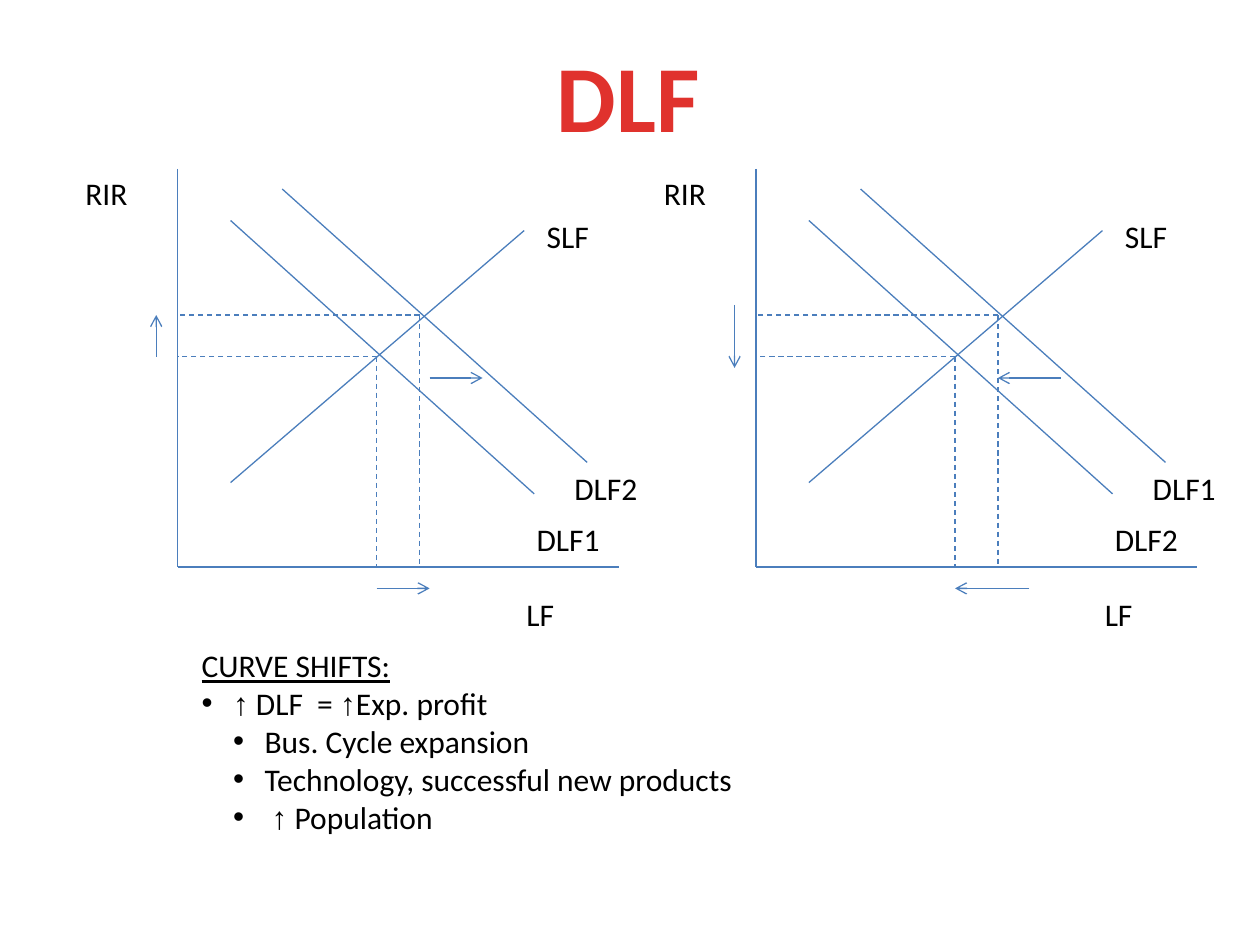
"""Build the DLF slide: two loanable funds graphs and a list of curve shifts."""
from lxml import etree
from pptx import Presentation
from pptx.dml.color import RGBColor
from pptx.enum.dml import MSO_LINE_DASH_STYLE as Dash
from pptx.enum.shapes import MSO_CONNECTOR as Connector
from pptx.enum.text import MSO_ANCHOR as Anchor, MSO_AUTO_SIZE as AutoSize, PP_ALIGN as Align
from pptx.oxml.ns import qn
from pptx.util import Inches, Pt

RED = RGBColor(0xE0, 0x32, 0x2D)
BLUE = RGBColor(0x4B, 0x7E, 0xBC)
BLACK = RGBColor(0, 0, 0)

deck = Presentation()
deck.slide_width, deck.slide_height = Inches(10), Inches(7.5)
page = deck.slides.add_slide(deck.slide_layouts[1])


def add_line(start, end, dashed=False, arrow=False):
    """Draw a thin blue line between two points given in inches."""
    line = page.shapes.add_connector(Connector.STRAIGHT, *map(Inches, start + end))
    line.line.color.rgb = BLUE
    line.line.width = Pt(0.75)
    if dashed:
        line.line.dash_style = Dash.DASH
    if arrow:
        etree.SubElement(line.line._get_or_add_ln(), qn("a:tailEnd"), type="arrow")
    etree.SubElement(line._element.spPr, qn("a:effectLst"))


def style_run(run, size, color, font="Calibri"):
    """Set the size, colour and typeface of a run."""
    run.font.size = Pt(size)
    run.font.color.rgb = color
    run.font.name = font


title = page.shapes.title
title.left, title.top, title.width, title.height = map(Inches, (4.3, 0.25, 1.37, 1.01))
title.text_frame.text = "DLF"
title.text_frame.word_wrap = False
title.text_frame.auto_size = AutoSize.NONE
title.text_frame.vertical_anchor = Anchor.MIDDLE
heading = title.text_frame.paragraphs[0]
heading.alignment = Align.CENTER
style_run(heading.runs[0], 54, RED)
heading.runs[0].font.bold = True

GRAPH_LINES = [
    ((0, 1.34), (0, 4.5)),
    ((0, 4.5), (3.5, 4.5)),
    ((0.42, 1.75), (2.83, 3.92)),
    ((0.83, 1.5), (3.25, 3.67)),
    ((0.42, 3.83), (2.75, 1.83)),
]
EQUILIBRIA = [(1.58, 2.83), (1.92, 2.5)]
RISE_ARROWS = [
    ((2, 3), (2.42, 3)),
    ((-0.17, 2.83), (-0.17, 2.5)),
    ((1.58, 4.67), (2, 4.67)),
]
FALL_ARROWS = [
    ((2.42, 3), (1.92, 3)),
    ((-0.17, 2.42), (-0.17, 2.92)),
    ((2.17, 4.67), (1.58, 4.67)),
]
GRAPHS = [
    (1.41, "DLF1", "DLF2", RISE_ARROWS),
    (6, "DLF2", "DLF1", FALL_ARROWS),
]

for origin, lower_name, upper_name, arrows in GRAPHS:
    for (x1, y1), (x2, y2) in GRAPH_LINES:
        add_line((origin + x1, y1), (origin + x2, y2))
    for x, y in EQUILIBRIA:
        add_line((origin + x, y), (origin, y), dashed=True)
        add_line((origin + x, y), (origin + x, 4.5), dashed=True)
    for (x1, y1), (x2, y2) in arrows:
        add_line((origin + x1, y1), (origin + x2, y2), arrow=True)
    labels = [
        (lower_name, 2.75, 4.08, 0.71),
        (upper_name, 3.05, 3.67, 0.71),
        ("SLF", 2.83, 1.67, 0.54),
        ("RIR", -0.83, 1.33, 0.54),
        ("LF", 2.67, 4.67, 0.43),
    ]
    for text, x, y, width in labels:
        label = page.shapes.add_textbox(*map(Inches, (origin + x, y, width, 0.4)))
        label.text_frame.word_wrap = False
        label.text_frame.text = text
        style_run(label.text_frame.paragraphs[0].runs[0], 18, BLACK)

SHIFTS = [
    (None, ["CURVE SHIFTS:"]),
    (0, ["↑", " DLF  = ", "↑", "Exp. profit"]),
    (1, ["Bus. Cycle expansion"]),
    (1, ["Technology, successful new products"]),
    (1, [" ", "↑", " Population"]),
]

body = page.placeholders[1]
body.left, body.top, body.width, body.height = map(Inches, (1.5, 5.08, 4.64, 1.62))
frame = body.text_frame
frame.word_wrap = False
frame.auto_size = AutoSize.NONE
frame.vertical_anchor = Anchor.TOP
for index, (level, spans) in enumerate(SHIFTS):
    para = frame.paragraphs[0] if index == 0 else frame.add_paragraph()
    para.level = level or 0
    para.space_before = Pt(0)
    properties = para._p.get_or_add_pPr()
    if level is None:
        properties.set("marL", "0")
        properties.set("indent", "0")
        etree.SubElement(properties, qn("a:buNone"))
    else:
        properties.set("marL", str(Inches(0.25 * (level + 1))))
        properties.set("indent", str(Inches(-0.25)))
        etree.SubElement(properties, qn("a:buFont"), typeface="Arial")
        etree.SubElement(properties, qn("a:buChar"), char="•")
    for text in spans:
        span = para.add_run()
        span.text = text
        style_run(span, 18, BLACK, "Arial" if text == "↑" else "Calibri")
        span.font.underline = level is None

deck.save("out.pptx")
